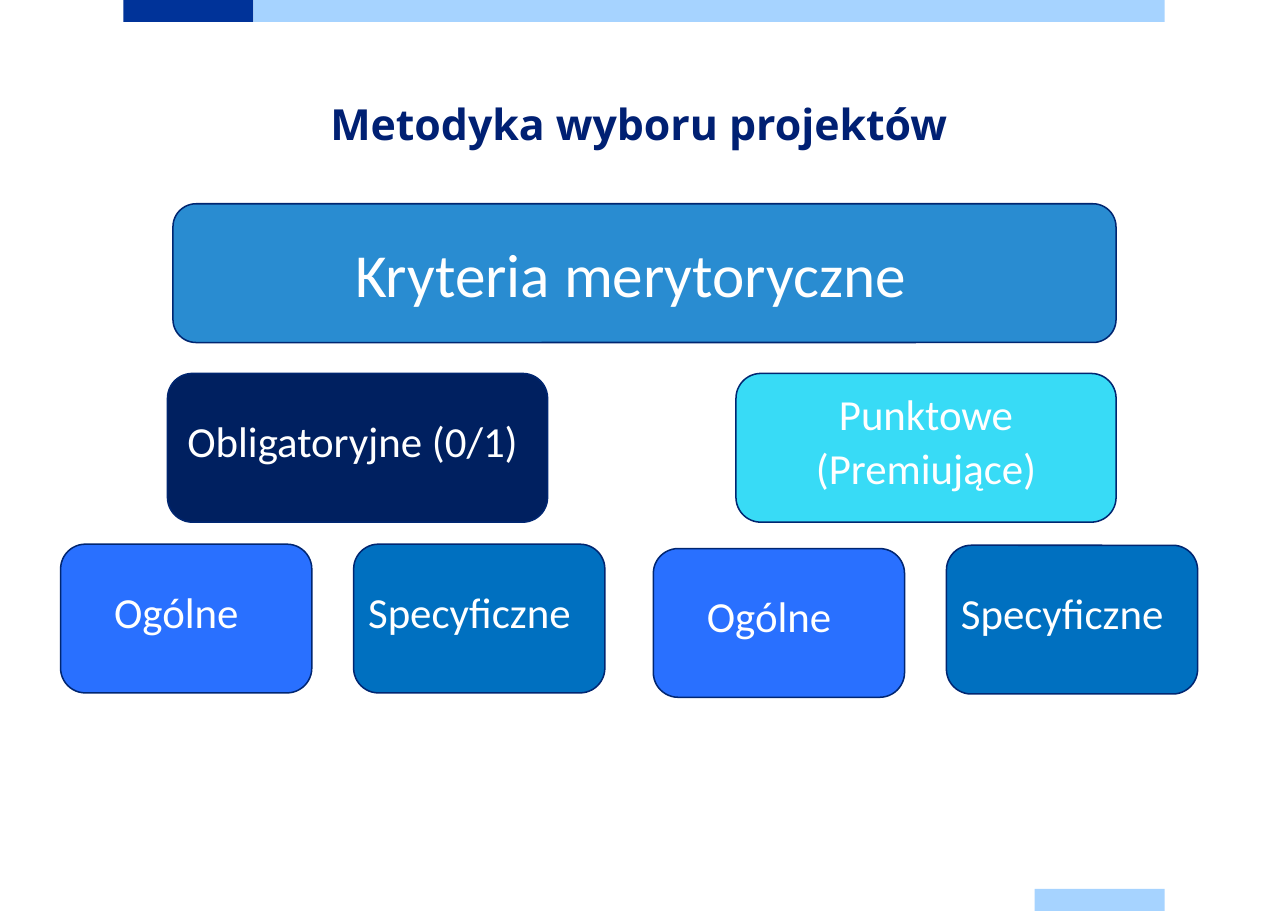
from dataclasses import dataclass

from pptx import Presentation
from pptx.dml.color import RGBColor
from pptx.enum.shapes import MSO_SHAPE
from pptx.enum.text import MSO_ANCHOR, PP_ALIGN
from pptx.util import Inches, Pt

TITLE = "Metodyka wyboru projektów"
MAIN = "Kryteria merytoryczne"
# label, fill name, left, right inset that nudges the label off centre
GROUPS = [
    ("Obligatoryjne (0/1)", "navy", 1.52, 0.09),
    ("Punktowe\n(Premiujące)", "cyan", 6.68, 0),
]
# label, fill name, left, top
TYPES = [
    ("Ogólne", "blue", 0.55, 4.94),
    ("Specyficzne", "ocean", 3.21, 4.94),
    ("Ogólne", "blue", 5.93, 4.98),
    ("Specyficzne", "ocean", 8.59, 4.95),
]


@dataclass(frozen=True)
class Theme:
    title: str = "002073"
    outline: str = "002671"
    label: str = "FFFFFF"
    bar_dark: str = "003399"
    bar_light: str = "A6D3FF"
    sky: str = "298CD1"
    navy: str = "002060"
    cyan: str = "38DBF6"
    blue: str = "2970FF"
    ocean: str = "0070C0"
    title_font: str = "Open Sans"
    label_font: str = "Calibri"
    text_size: int = 28
    main_size: int = 40


THEME = Theme()
WIDTH, HEIGHT = 11.69, 8.27
MARGIN, BAR_HEIGHT, BAR_SHORT, BAR_LONG = 1.12, 0.2, 1.18, 8.27
CONTENT_WIDTH = BAR_SHORT + BAR_LONG
GROUP_TOP, GROUP_WIDTH = 3.39, 3.45
TYPE_WIDTH, BOX_HEIGHT, TYPE_INSET = 2.28, 1.35, 0.18


def add_filled(page, kind, left, top, width, height, color):
    shape = page.shapes.add_shape(
        kind, Inches(left), Inches(top), Inches(width), Inches(height))
    shape.shadow.inherit = False
    shape.fill.solid()
    shape.fill.fore_color.rgb = RGBColor.from_string(color)
    shape.line.fill.background()
    return shape


def write(shape, text, font, size, color, bold=False, spacing=None, inset=0):
    """Centre the text; spacing is the exact line height in points."""
    frame = shape.text_frame
    frame.word_wrap = True
    frame.margin_left = frame.margin_top = frame.margin_bottom = 0
    frame.margin_right = Inches(inset)
    frame.text = text
    for index, para in enumerate(frame.paragraphs):
        para.alignment = PP_ALIGN.CENTER
        if spacing:
            para.line_spacing = Pt(spacing)
        if index:
            para.space_before = Pt(11)
        for span in para.runs:
            span.font.name = font
            span.font.size = Pt(size)
            span.font.bold = bold
            span.font.color.rgb = RGBColor.from_string(color)


def add_card(page, text, color, left, top, width, height, inset,
             size=THEME.text_size, spacing=24):
    card = add_filled(page, MSO_SHAPE.ROUNDED_RECTANGLE,
                      left, top, width, height, color)
    card.line.color.rgb = RGBColor.from_string(THEME.outline)
    card.line.width = Pt(1)
    card.text_frame.vertical_anchor = MSO_ANCHOR.MIDDLE
    write(card, text, THEME.label_font, size, THEME.label,
          spacing=spacing, inset=inset)


def main():
    deck = Presentation()
    deck.slide_width, deck.slide_height = Inches(WIDTH), Inches(HEIGHT)
    page = deck.slides.add_slide(deck.slide_layouts[6])

    bars = [
        (MARGIN, 0, BAR_SHORT, THEME.bar_dark),
        (MARGIN + BAR_SHORT, 0, BAR_LONG, THEME.bar_light),
        (MARGIN + BAR_LONG, HEIGHT - BAR_HEIGHT, BAR_SHORT, THEME.bar_light),
    ]
    for left, top, width, color in bars:
        add_filled(page, MSO_SHAPE.RECTANGLE, left, top, width, BAR_HEIGHT, color)

    title = page.shapes.add_textbox(
        Inches(MARGIN), Inches(0.85), Inches(CONTENT_WIDTH), Inches(0.79))
    write(title, TITLE, THEME.title_font, THEME.text_size, THEME.title,
          bold=True, spacing=36, inset=0.1)

    add_card(page, MAIN, THEME.sky, 1.57, 1.85, 8.56, 1.26, 0.25,
             size=THEME.main_size, spacing=None)
    for text, fill, left, inset in GROUPS:
        add_card(page, text, getattr(THEME, fill), left, GROUP_TOP,
                 GROUP_WIDTH, BOX_HEIGHT, inset)
    for text, fill, left, top in TYPES:
        add_card(page, text, getattr(THEME, fill), left, top,
                 TYPE_WIDTH, BOX_HEIGHT, TYPE_INSET)

    deck.save("out.pptx")


if __name__ == "__main__":
    main()
